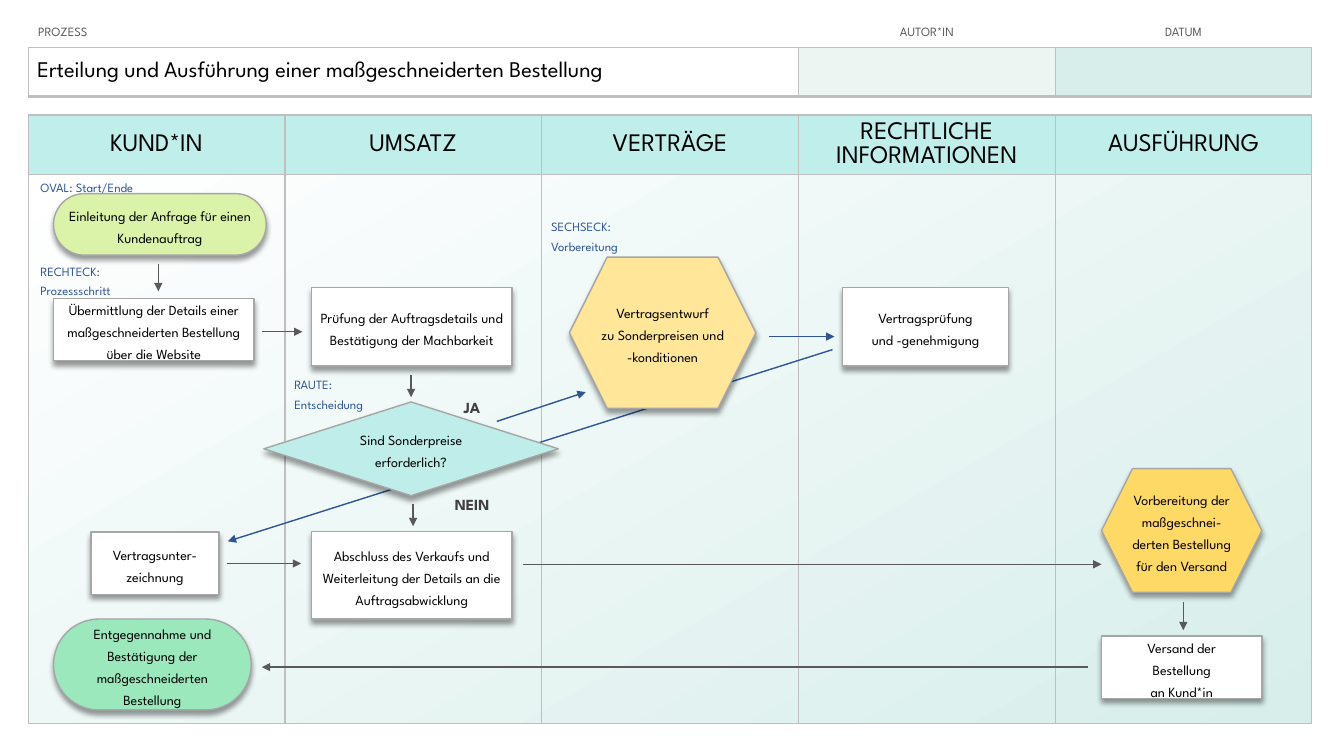
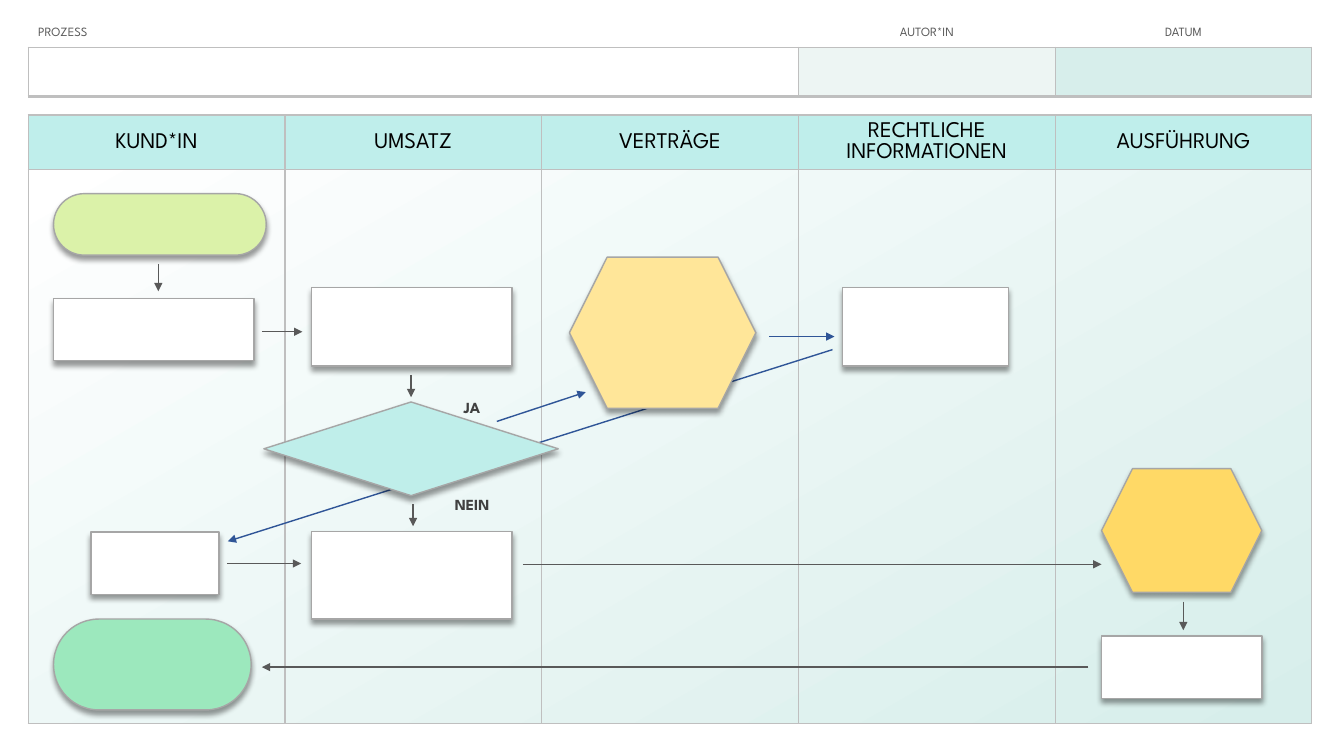
"""Build a filled swimlane process map and its blank version."""
import dataclasses

import lxml.etree
import pptx
import pptx.dml.color
import pptx.enum.shapes
import pptx.enum.text
import pptx.oxml.ns
import pptx.util

Cm, Pt = pptx.util.Cm, pptx.util.Pt
MSO = pptx.enum.shapes.MSO_SHAPE
ALIGN = pptx.enum.text.PP_ALIGN
MIDDLE = pptx.enum.text.MSO_ANCHOR.MIDDLE
qn = pptx.oxml.ns.qn


@dataclasses.dataclass(frozen=True)
class Theme:
    font: str = "League Spartan"
    black: str = "000000"
    white: str = "FFFFFF"
    gray: str = "595959"
    dark: str = "404040"
    blue: str = "2F5597"
    outline: str = "A6A6A6"
    grid: str = "BFBFBF"
    lane_head: str = "BFEEEB"
    pale: str = "EDF5F3"
    mint: str = "D7EEEB"
    lime: str = "DBF2A9"
    green: str = "9CE8BD"
    aqua: str = "BFEEEA"
    sand: str = "FFE699"
    gold: str = "FFD966"
    small: float = 9
    body: float = 10
    answer: float = 11
    title: float = 16
    spacing: float = 1.3
    line: float = 1
    rule: float = 2.25


T = Theme()
LEFT, LANE, HEIGHT = 0.71, 6.47, 15.34
LANES = ["KUND*IN", "UMSATZ", "VERTRÄGE", "RECHTLICHE INFORMATIONEN", "AUSFÜHRUNG"]
TITLE = "Erteilung und Ausführung einer maßgeschneiderten Bestellung"
OVAL, STEP, CHOICE, PREP = (MSO.ROUNDED_RECTANGLE, MSO.FLOWCHART_PROCESS,
                            MSO.FLOWCHART_DECISION, MSO.HEXAGON)

STEPS = [
    (OVAL, (1.35, 4.88, 5.36, 1.55), T.lime, "Einleitung der Anfrage für einen Kundenauftrag"),
    (STEP, (1.35, 7.52, 5.05, 1.57), T.white,
     "Übermittlung der Details einer maßgeschneiderten Bestellung über die Website"),
    (CHOICE, (6.65, 10.13, 7.42, 2.36), T.aqua, "Sind Sonderpreise erforderlich?"),
    (OVAL, (1.35, 15.6, 4.98, 2.29), T.green,
     "Entgegennahme und Bestätigung der maßgeschneiderten Bestellung"),
    (STEP, (7.85, 7.24, 5.05, 1.98), T.white,
     "Prüfung der Auftragsdetails und Bestätigung der Machbarkeit"),
    (STEP, (21.23, 7.24, 4.19, 1.98), T.white, "Vertragsprüfung\nund -genehmigung"),
    (STEP, (7.85, 13.39, 5.05, 2.21), T.white,
     "Abschluss des Verkaufs und Weiterleitung der Details an die Auftragsabwicklung"),
    (PREP, (27.76, 11.81, 4.04, 3.12), T.gold,
     "Vorbereitung der maßgeschnei-derten Bestellung für den Versand"),
    (STEP, (27.76, 16.03, 4.04, 1.57), T.white, "Versand der\vBestellung\nan Kund*in"),
    (STEP, (2.29, 13.41, 3.23, 1.57), T.white, "Vertragsunter-zeichnung"),
    (PREP, (14.35, 6.48, 4.7, 3.81), T.sand,
     "Vertragsentwurf\nzu Sonderpreisen und -konditionen"),
]
HINTS = [
    ((0.97, 6.4, 3.25, 1.24), "RECHTECK:\nProzessschritt"),
    ((0.97, 4.37, 4.09, 0.58), "OVAL: Start/Ende"),
    ((7.37, 9.3, 2.72, 1.17), "RAUTE:\nEntscheidung"),
    ((13.84, 5.41, 5.21, 0.99), "SECHSECK:\nVorbereitung"),
]
ANSWERS = [((10.92, 12.24, 1.96, 0.79), "NEIN"), ((10.97, 9.8, 1.85, 0.79), "JA")]
RETURN_ARROW = (20.98, 8.81, 5.74, 13.64)
CONTRACT_ARROWS = [(12.52, 10.62, 14.76, 9.88), (19.38, 8.48, 21.03, 8.48)]
FLOW_ARROWS = [
    (3.99, 6.65, 3.99, 7.34), (10.36, 9.45, 10.36, 10.01), (6.6, 8.36, 7.62, 8.36),
    (10.41, 12.7, 10.41, 13.26), (13.18, 14.22, 27.76, 14.22),
    (29.82, 15.16, 29.82, 15.88), (27.43, 16.81, 6.6, 16.81), (5.72, 14.2, 7.59, 14.2),
]


def rgb(color):
    return pptx.dml.color.RGBColor.from_string(color)


def add_xml(parent, tag, **attrs):
    return lxml.etree.SubElement(parent, qn(tag), attrs)


class Deck:
    def __init__(self):
        self.prs = pptx.Presentation()
        self.prs.slide_width, self.prs.slide_height = Cm(33.87), Cm(19.05)
        self.s = None

    def slide(self):
        self.s = self.prs.slides.add_slide(self.prs.slide_layouts[6])

    def fill_text(self, tf, text, size, color, align=ALIGN.CENTER, bold=False, spacing=None):
        tf.text = text
        for p in tf.paragraphs:
            p.alignment = align
            p.line_spacing = spacing
            for r in p.runs:
                r.font.name, r.font.size, r.font.bold = T.font, Pt(size), bold
                r.font.color.rgb = rgb(color)

    def frame(self, sp, inset=0.05):
        tf = sp.text_frame
        tf.word_wrap = True
        tf.vertical_anchor = MIDDLE
        tf.margin_left = tf.margin_right = tf.margin_top = tf.margin_bottom = Cm(inset)
        return tf

    def shape(self, kind, box):
        sp = self.s.shapes.add_shape(kind, *map(Cm, box))
        sp.shadow.inherit = False
        return sp

    def backdrop(self, box):
        sp = self.shape(MSO.RECTANGLE, box)
        sp.line.fill.background()
        sp.fill.gradient()
        sp.fill.gradient_angle = 300
        for stop, color, position in zip(sp.fill.gradient_stops, (T.white, T.mint), (0, 1)):
            stop.color.rgb, stop.position = rgb(color), position

    def step(self, kind, box, color, text):
        sp = self.shape(kind, box)
        if kind == OVAL:
            sp.adjustments[0] = 0.5
        sp.fill.solid()
        sp.fill.fore_color.rgb = rgb(color)
        sp.line.color.rgb, sp.line.width = rgb(T.outline), Pt(T.line)
        effects = sp._element.spPr.find(qn("a:effectLst"))
        shadow = add_xml(effects, "a:outerShdw", blurRad=str(Pt(4)), dist=str(Pt(3)),
                         dir="5400000", algn="t", rotWithShape="0")
        add_xml(add_xml(shadow, "a:srgbClr", val=T.black), "a:alpha", val="40000")
        if text:
            tf = self.frame(sp, 0 if kind == CHOICE else 0.05)
            self.fill_text(tf, text, T.body, T.black, spacing=T.spacing)

    def label(self, box, text, **style):
        sp = self.s.shapes.add_textbox(*map(Cm, box))
        self.fill_text(self.frame(sp), text, spacing=T.spacing, **style)

    def arrow(self, ends, color):
        sp = self.s.shapes.add_connector(pptx.enum.shapes.MSO_CONNECTOR.STRAIGHT, *map(Cm, ends))
        sp.line.color.rgb, sp.line.width = rgb(color), Pt(T.line)
        spPr = sp._element.spPr
        add_xml(spPr.find(qn("a:ln")), "a:tailEnd", type="triangle")
        add_xml(spPr, "a:effectLst")

    def table(self, top, widths, heights):
        gf = self.s.shapes.add_table(len(heights), len(widths), Cm(LEFT), Cm(top),
                                     Cm(sum(widths)), Cm(sum(heights)))
        tbl = gf.table
        tbl.first_row = tbl.horz_banding = False
        for col, width in zip(tbl.columns, widths):
            col.width = Cm(width)
        for row, height in zip(tbl.rows, heights):
            row.height = Cm(height)
        return tbl

    def cell(self, cell, fill=None, edges="LRTB", bottom=T.line, left=0.03):
        cell.vertical_anchor = MIDDLE
        cell.margin_left, cell.margin_right = Cm(left), Cm(0.03)
        cell.margin_top, cell.margin_bottom = Cm(0.03), 0
        if fill:
            cell.fill.solid()
            cell.fill.fore_color.rgb = rgb(fill)
        else:
            cell.fill.background()
        tcPr = cell._tc.get_or_add_tcPr()
        for i, edge in enumerate(edges):
            width = bottom if edge == "B" else T.line
            ln = add_xml(tcPr, "a:ln" + edge, w=str(Pt(width)))
            add_xml(add_xml(ln, "a:solidFill"), "a:srgbClr", val=T.grid)
            tcPr.insert(i, ln)
        return cell.text_frame

    def lanes(self, size, head):
        tbl = self.table(2.9, [LANE] * len(LANES), [head, HEIGHT - head])
        for i, name in enumerate(LANES):
            self.fill_text(self.cell(tbl.cell(0, i), T.lane_head), name, size, T.black)
            self.cell(tbl.cell(1, i))

    def header(self, title):
        tbl = self.table(0.48, [3 * LANE, LANE, LANE], [0.71, 1.24])
        columns = [("PROZESS", ALIGN.LEFT, 0.25, T.white),
                   ("AUTOR*IN", ALIGN.CENTER, 0.03, T.pale),
                   ("DATUM", ALIGN.CENTER, 0.03, T.mint)]
        for i, (name, align, left, fill) in enumerate(columns):
            tf = self.cell(tbl.cell(0, i), edges="B", left=left)
            self.fill_text(tf, name, T.small, T.gray, align)
            self.cell(tbl.cell(1, i), fill, bottom=T.rule, left=0.23)
        if title:
            self.fill_text(tbl.cell(1, 0).text_frame, title, T.title, T.black, ALIGN.LEFT)

    def process_map(self, filled, lane_size, lane_head):
        self.slide()
        self.backdrop((LEFT, 4.06, len(LANES) * LANE, 14.17))
        self.lanes(lane_size, lane_head)
        self.header(TITLE if filled else "")
        self.arrow(RETURN_ARROW, T.blue)
        for kind, box, color, text in STEPS:
            self.step(kind, box, color, text if filled else "")
        for box, text in HINTS if filled else []:
            self.label(box, text, size=T.small, color=T.blue, align=ALIGN.LEFT)
        for box, text in ANSWERS:
            self.label(box, text, size=T.answer, color=T.dark, bold=True)
        for ends in CONTRACT_ARROWS:
            self.arrow(ends, T.blue)
        for ends in FLOW_ARROWS:
            self.arrow(ends, T.gray)


def main():
    deck = Deck()
    deck.process_map(filled=True, lane_size=18, lane_head=1.5)
    deck.process_map(filled=False, lane_size=16, lane_head=1.37)
    deck.prs.save("out.pptx")


if __name__ == "__main__":
    main()
